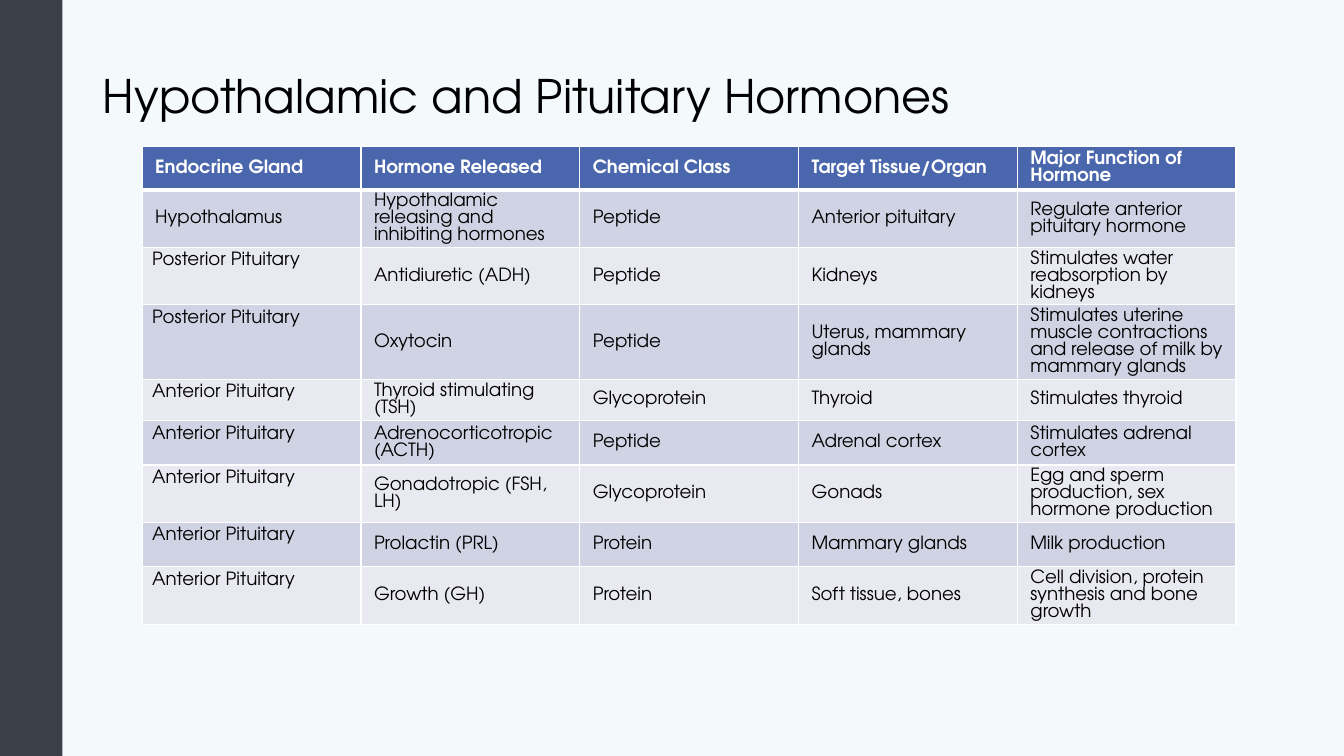
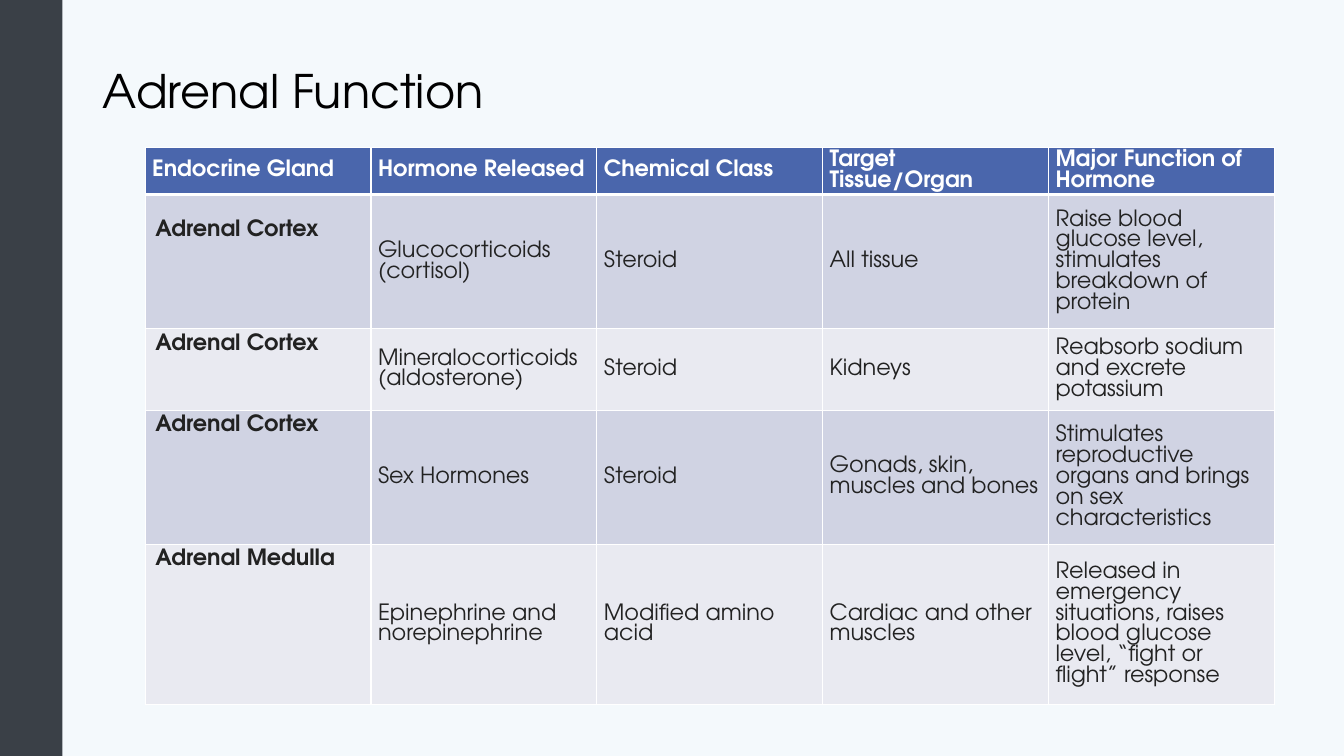
"""Build two slides of endocrine hormone tables."""
from lxml import etree
from pptx import Presentation
from pptx.dml.color import RGBColor
from pptx.enum.shapes import MSO_SHAPE
from pptx.enum.text import MSO_ANCHOR, MSO_AUTO_SIZE, PP_ALIGN
from pptx.oxml.ns import qn
from pptx.util import Inches, Pt

MID, TOP = MSO_ANCHOR.MIDDLE, MSO_ANCHOR.TOP
LEFT, RECT, FIXED = PP_ALIGN.LEFT, MSO_SHAPE.RECTANGLE, MSO_AUTO_SIZE.NONE

THEME = {
    "font": "TeX Gyre Adventor", "title": 33,
    "page": "F4F9FC", "side": "3A4047", "ink": "000000", "white": "FFFFFF",
    "head": "4A66AC", "bands": ("D0D3E3", "E9EAF1"),
}
WIDE, HIGH = 13.33, 7.5
SIDE = 0.62
HEADS = ("Endocrine Gland", "Hormone Released", "Chemical Class",
         "Target Tissue/Organ", "Major Function of Hormone")
POST, ANT = "Posterior Pituitary", "Anterior Pituitary"
CORTEX = "Adrenal Cortex"

SLIDES = [
    {
        "title": "Hypothalamic and Pituitary Hormones", "tall": 1.16,
        "at": (1.41, 1.45), "col": 2.17, "size": 13, "ink": "000000",
        "bold": False, "pads": {"head": (0.13, 0.05), "body": (0.13, 0.03)},
        "extra": 0, "mids": {1},
        "highs": (0.42, 0.57, 0.57, 0.74, 0.41, 0.44, 0.57, 0.44, 0.57),
        "rows": [
            ("Hypothalamus", "Hypothalamic releasing and inhibiting hormones",
             "Peptide", "Anterior pituitary",
             "Regulate anterior pituitary hormone"),
            (POST, "Antidiuretic (ADH)", "Peptide", "Kidneys",
             "Stimulates water reabsorption by kidneys"),
            (POST, "Oxytocin", "Peptide", "Uterus, mammary glands",
             "Stimulates uterine muscle contractions and release of milk "
             "by mammary glands"),
            (ANT, "Thyroid stimulating (TSH)", "Glycoprotein", "Thyroid",
             "Stimulates thyroid"),
            (ANT, "Adrenocorticotropic (ACTH)", "Peptide", "Adrenal cortex",
             "Stimulates adrenal cortex"),
            (ANT, "Gonadotropic (FSH, LH)", "Glycoprotein", "Gonads",
             "Egg and sperm production, sex hormone production"),
            (ANT, "Prolactin (PRL)", "Protein", "Mammary glands",
             "Milk production"),
            (ANT, "Growth (GH)", "Protein", "Soft tissue, bones",
             "Cell division, protein synthesis and bone growth"),
        ],
    },
    {
        "title": "Adrenal Function", "tall": 1.06,
        "at": (1.44, 1.46), "col": 2.24, "size": 16, "ink": "222222",
        "bold": True, "pads": {"head": (0.07, 0.03), "body": (0.07, 0.02)},
        "extra": 0.2, "mids": set(),
        "highs": (0.46, 1.33, 0.81, 1.33, 1.59),
        "rows": [
            (CORTEX, "Glucocorticoids (cortisol)", "Steroid", "All tissue",
             "Raise blood glucose level, stimulates breakdown of protein"),
            (CORTEX, "Mineralocorticoids (aldosterone)", "Steroid", "Kidneys",
             "Reabsorb sodium and excrete potassium"),
            (CORTEX, "Sex Hormones", "Steroid",
             "Gonads, skin, muscles and bones",
             "Stimulates reproductive organs and brings on sex "
             "characteristics"),
            ("Adrenal Medulla", "Epinephrine and norepinephrine",
             "Modified amino acid", "Cardiac and other muscles",
             "Released in emergency situations, raises blood glucose level, "
             "“fight or flight” response"),
        ],
    },
]


def assign(obj, vals):
    for name, val in vals.items():
        setattr(obj, name, val)


def paint(fill, tint):
    fill.solid()
    fill.fore_color.rgb = RGBColor.from_string(tint)


def style(font, size, tint, bold=False):
    assign(font, {"name": THEME["font"], "size": Pt(size), "bold": bold})
    font.color.rgb = RGBColor.from_string(tint)


def edge(cell, row):
    props = cell._tc.get_or_add_tcPr()
    thick = {"lnT": 3 if row == 1 else 1, "lnB": 3 if row == 0 else 1}
    for spot, tag in enumerate(("lnL", "lnR", "lnT", "lnB")):
        line = etree.Element(qn(f"a:{tag}"), w=str(Pt(thick.get(tag, 1))))
        fill = etree.SubElement(line, qn("a:solidFill"))
        etree.SubElement(fill, qn("a:srgbClr"), val=THEME["white"])
        props.insert(spot, line)


def write(cell, text, row, col, data):
    head = row == 0
    top = col == 0 and not head and row not in data["mids"]
    side, pad = (0.1, 0.05) if top else data["pads"]["head" if head else "body"]
    lift = data["extra"] if top and row == 1 else 0
    cell.text = text
    assign(cell, {
        "vertical_anchor": TOP if top else MID,
        "margin_left": Inches(side), "margin_right": Inches(side),
        "margin_top": Inches(pad + lift), "margin_bottom": Inches(pad),
    })
    paint(cell.fill, THEME["head"] if head else THEME["bands"][(row - 1) % 2])
    style(cell.text_frame.paragraphs[0].runs[0].font, data["size"],
          THEME["white"] if head else data["ink"],
          head or (col == 0 and data["bold"]))
    edge(cell, row)


def chart(slide, data):
    rows = [HEADS, *data["rows"]]
    x, y = data["at"]
    size = (data["col"] * len(HEADS), sum(data["highs"]))
    grid = slide.shapes.add_table(
        len(rows), len(HEADS), *map(Inches, (x, y, *size))).table
    for col in grid.columns:
        col.width = Inches(data["col"])
    for r, (texts, high) in enumerate(zip(rows, data["highs"])):
        grid.rows[r].height = Inches(high)
        for c, text in enumerate(texts):
            write(grid.cell(r, c), text, r, c, data)


def name(slide, data):
    box = slide.shapes.title
    assign(box, {"left": Inches(0.92), "top": Inches(0.4),
                 "width": Inches(11.5), "height": Inches(data["tall"])})
    frame = box.text_frame
    frame.text = data["title"]
    assign(frame, {"vertical_anchor": MID, "auto_size": FIXED,
                   "word_wrap": True})
    para = frame.paragraphs[0]
    assign(para, {"alignment": LEFT, "line_spacing": 0.9})
    style(para.runs[0].font, THEME["title"], THEME["ink"])


def dress(deck, slide):
    master = deck.slide_master
    paint(master.background.fill, THEME["page"])
    band = slide.shapes.add_shape(RECT, 0, 0, Inches(SIDE), Inches(HIGH))
    band.shadow.inherit = False
    paint(band.fill, THEME["side"])
    band.line.fill.background()
    master.shapes.element.insert(2, band.element)


def main():
    deck = Presentation()
    assign(deck, {"slide_width": Inches(WIDE), "slide_height": Inches(HIGH)})
    for i, data in enumerate(SLIDES):
        slide = deck.slides.add_slide(deck.slide_layouts[5])
        if i == 0:
            dress(deck, slide)
        name(slide, data)
        chart(slide, data)
    deck.save("out.pptx")


if __name__ == "__main__":
    main()
